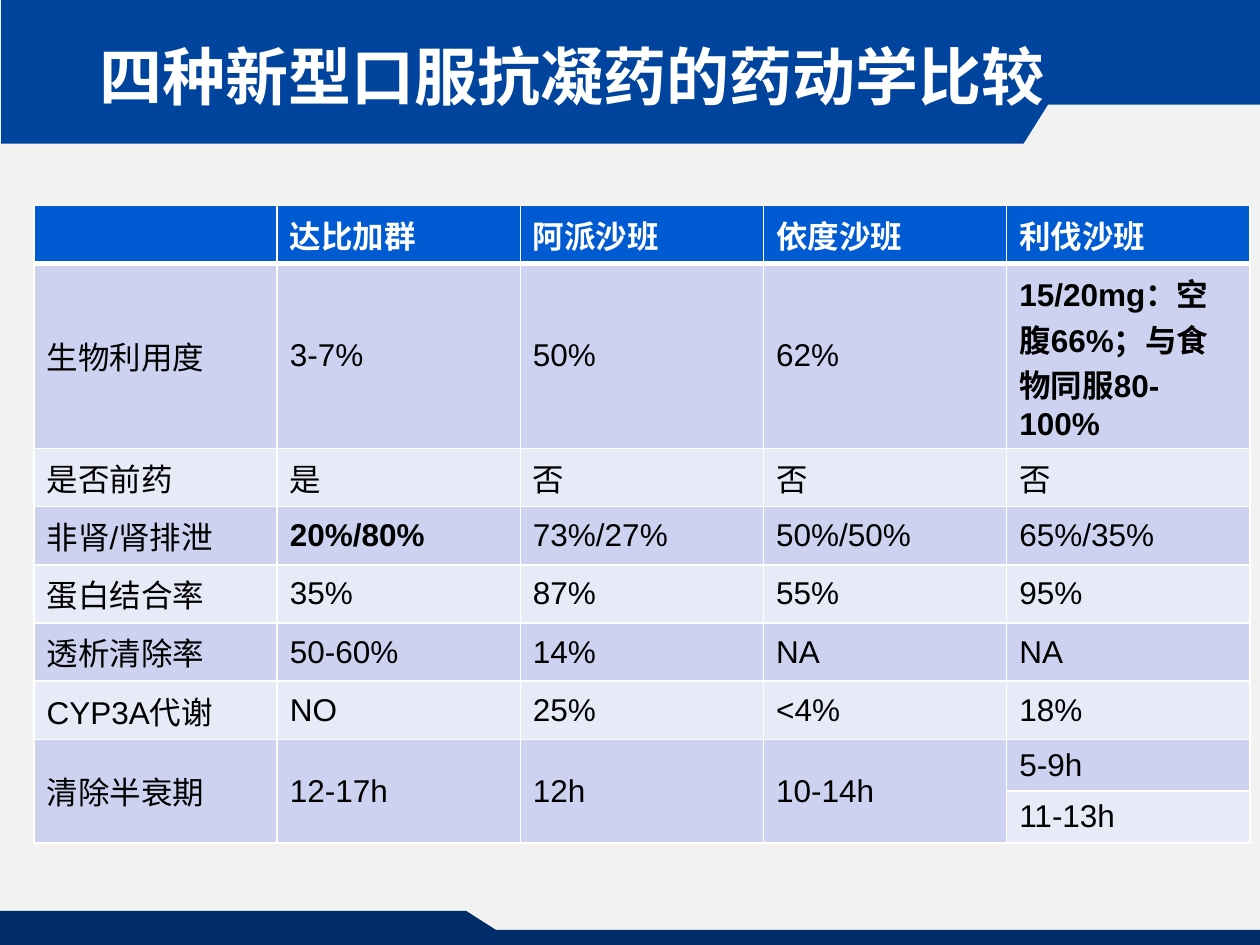
from lxml.etree import SubElement
from pptx import Presentation
from pptx.dml.color import RGBColor
from pptx.enum.shapes import MSO_SHAPE
from pptx.enum.text import MSO_ANCHOR, PP_ALIGN
from pptx.oxml.ns import qn
from pptx.util import Inches, Pt


def paint(obj, color):
    obj.fill.solid()
    obj.fill.fore_color.rgb = RGBColor.from_string(color)


def write(tf, text, size=18, color="000000", bold=False, font="Arial", spacing=None):
    tf.word_wrap = True
    p = tf.paragraphs[0]
    p.alignment = PP_ALIGN.LEFT
    p.line_spacing = spacing
    r = p.add_run()
    r.text = text
    r.font.size = Pt(size)
    r.font.bold = bold
    r.font.name = font
    r.font.color.rgb = RGBColor.from_string(color)
    SubElement(r.font._element, qn("a:ea"), typeface="Noto Sans CJK SC")


prs = Presentation()
prs.slide_width, prs.slide_height = Inches(10), Inches(7.5)
s = prs.slides.add_slide(prs.slide_layouts[5])
paint(s.background, "F2F2F2")

footer_tab = [(3.7, 7.23), (3.95, 7.39), (0, 7.39), (0, 7.23)]
footer_bar = (0, 7.38, 10.01, 0.12)
header_bar = (0.01, -0.04, 10, 1.18)
header_notch = [(8.32, 0.83), (8.05, 1.26), (10.01, 1.26), (10.01, 0.83)]
for outline, color in [(footer_tab, "002D6A"), (footer_bar, "002D6A"),
                       (header_bar, "00449E"), (header_notch, "F2F2F2")]:
    if isinstance(outline, list):
        points = [(Inches(x), Inches(y)) for x, y in outline]
        builder = s.shapes.build_freeform(*points[0])
        builder.add_line_segments(points[1:], close=True)
        sp = builder.convert_to_shape()
    else:
        sp = s.shapes.add_shape(MSO_SHAPE.RECTANGLE, *[Inches(v) for v in outline])
    paint(sp, color)
    sp.line.fill.background()
    sp.shadow.inherit = False

title = s.shapes.title
title.element.getparent().append(title.element)
title.left, title.top = Inches(0.69), Inches(0.04)
title.width, title.height = Inches(8.39), Inches(0.99)
title.text_frame.vertical_anchor = MSO_ANCHOR.MIDDLE
write(title.text_frame, "四种新型口服抗凝药的药动学比较", size=36, color="FFFFFF",
      bold=True, font="Noto Sans CJK SC", spacing=1.2)

rows = [
    ["", "达比加群", "阿派沙班", "依度沙班", "利伐沙班"],
    ["生物利用度", "3-7%", "50%", "62%", "15/20mg：空腹66%；与食物同服80-100%"],
    ["是否前药", "是", "否", "否", "否"],
    ["非肾/肾排泄", "20%/80%", "73%/27%", "50%/50%", "65%/35%"],
    ["蛋白结合率", "35%", "87%", "55%", "95%"],
    ["透析清除率", "50-60%", "14%", "NA", "NA"],
    ["CYP3A代谢", "NO", "25%", "<4%", "18%"],
    ["清除半衰期", "12-17h", "12h", "10-14h", "5-9h"],
    ["", "", "", "", "11-13h"],
]
bold_cells = {(1, 4), (3, 1)}

table = s.shapes.add_table(len(rows), 5, Inches(0.27), Inches(1.63),
                           Inches(9.65), Inches(4.28)).table
for col in table.columns:
    col.width = Inches(1.93)
for i, row in enumerate(rows):
    table.rows[i].height = Inches(1 if i == 1 else 0.41)
    for j, text in enumerate(row):
        cell = table.cell(i, j)
        cell.vertical_anchor = MSO_ANCHOR.MIDDLE
        for side in "LRTB":
            thick = (i, side) in [(0, "B"), (1, "T")]
            ln = SubElement(cell._tc.get_or_add_tcPr(), qn("a:ln" + side),
                            w=str(Pt(3 if thick else 1)))
            SubElement(SubElement(ln, qn("a:solidFill")), qn("a:srgbClr"), val="FFFFFF")
        paint(cell, "005BD3" if i == 0 else "CCD2EF" if i % 2 else "E7EAF7")
        if text:
            write(cell.text_frame, text, color="000000" if i else "FFFFFF",
                  bold=i == 0 or (i, j) in bold_cells)
for j in range(4):
    table.cell(7, j).merge(table.cell(8, j))

prs.save("out.pptx")
